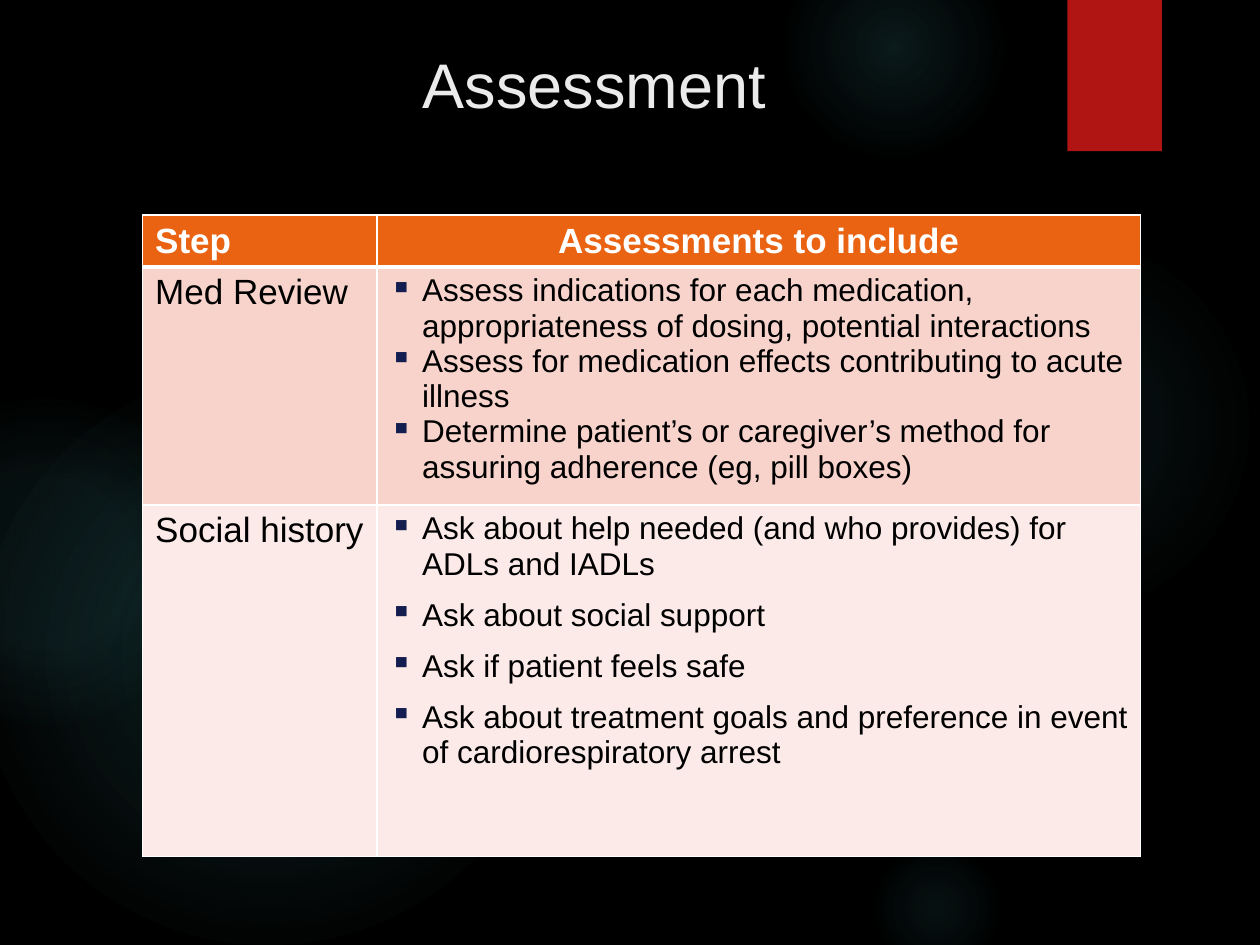
from lxml import etree
from pptx import Presentation
from pptx.dml.color import RGBColor
from pptx.enum import shapes, text
from pptx.oxml import parse_xml
from pptx.oxml.ns import nsdecls, qn
from pptx.util import Pt

HUES = {"back": "000000", "glow": "50B9C1", "red": "B01513", "title": "EBEBEB",
        "head": "EA6312", "odd": "F7D3CC", "even": "FBEAE7",
        "white": "FFFFFF", "black": "000000", "bullet": "131D4F"}


def style(par, size, hue, bold=False):
    for run in par.runs:
        run.font.name = "Arial"
        run.font.size = Pt(size)
        run.font.bold = bold
        run.font.color.rgb = RGBColor.from_string(HUES[hue])


def edge(cell, sides):
    """Draw white cell borders; sides maps L, R, T, B to widths in points."""
    props = cell._tc.get_or_add_tcPr()
    for i, (side, width) in enumerate(sides.items()):
        props.insert(i, parse_xml(
            f'<a:ln{side} {nsdecls("a")} w="{Pt(width)}"><a:solidFill>'
            f'<a:srgbClr val="{HUES["white"]}"/></a:solidFill></a:ln{side}>'))


prs = Presentation()
prs.slide_width, prs.slide_height = Pt(720), Pt(540)
slide = prs.slides.add_slide(prs.slide_layouts[5])
slide.background.fill.solid()
slide.background.fill.fore_color.rgb = RGBColor.from_string(HUES["back"])

# Soft glows: left, top, diameter, then (position, opacity) stops in percent
glows = [
    (496, 132, 222, [(0, 7), (36, 6), (69, 0)]),
    (448, -36, 126, [(0, 14), (36, 7), (73, 0)]),
    (496, 480, 78, [(0, 9), (36, 5), (66, 0)]),
    (-12, 210, 330, [(0, 11), (36, 10), (75, 0)]),
    (-66, 228, 186, [(0, 8), (36, 8), (72, 0)]),
]
for left, top, size, stops in glows:
    glow = slide.shapes.add_shape(shapes.MSO_SHAPE.OVAL, Pt(left), Pt(top), Pt(size), Pt(size))
    glow.shadow.inherit = False
    glow.line.fill.background()
    glow.fill.background()
    marks = "".join(
        f'<a:gs pos="{pos * 1000}"><a:srgbClr val="{HUES["glow"]}">'
        f'<a:alpha val="{alpha * 1000}"/></a:srgbClr></a:gs>' for pos, alpha in stops)
    props = glow._element.spPr
    props.replace(props.find(qn("a:noFill")), parse_xml(
        f'<a:gradFill {nsdecls("a")}><a:gsLst>{marks}</a:gsLst><a:path path="circle">'
        '<a:fillToRect l="50000" t="50000" r="50000" b="50000"/></a:path></a:gradFill>'))

tab = slide.shapes.add_shape(shapes.MSO_SHAPE.RECTANGLE, Pt(610), Pt(0), Pt(54), Pt(86.4))
tab.shadow.inherit = False
tab.line.fill.background()
tab.fill.solid()
tab.fill.fore_color.rgb = RGBColor.from_string(HUES["red"])

title = slide.shapes.title
title.left, title.top, title.width, title.height = Pt(57), Pt(22.3), Pt(575), Pt(78)
frame = title.text_frame
frame.text = "Assessment "
frame.vertical_anchor = text.MSO_ANCHOR.TOP
frame.paragraphs[0].alignment = text.PP_ALIGN.CENTER
style(frame.paragraphs[0], 36, "title")

# Each row: step, items, height, fill, gap between items
rows = [
    ("Step", ["Assessments to include"], 25.2, "head", 0),
    ("Med Review", [
        "Assess indications for each medication, appropriateness of dosing, potential interactions",
        "Assess for medication effects contributing to acute illness",
        "Determine patient’s or caregiver’s method for assuring adherence (eg, pill boxes)",
    ], 136, "odd", 0),
    ("Social history", [
        "Ask about help needed (and who provides) for ADLs and IADLs",
        "Ask about social support",
        "Ask if patient feels safe",
        "Ask about treatment goals and preference in event of cardiorespiratory arrest",
    ], 201, "even", 9),
]
widths = [134, 436.2]
table = slide.shapes.add_table(len(rows), 2, Pt(81.5), Pt(123), Pt(sum(widths)),
                               Pt(sum(row[2] for row in rows))).table
for col, width in zip(table.columns, widths):
    col.width = Pt(width)

for r, (step, items, height, fill, gap) in enumerate(rows):
    head = r == 0
    table.rows[r].height = Pt(height)
    for c, lines in enumerate([[step], items]):
        cell = table.cell(r, c)
        cell.fill.solid()
        cell.fill.fore_color.rgb = RGBColor.from_string(HUES[fill])
        edge(cell, {"L": 1, "R": 1, "T": 3 if r == 1 else 1, "B": 3 if head else 1})
        cell.text_frame.text = "\n".join(lines)
        for i, par in enumerate(cell.text_frame.paragraphs):
            listed = c == 1 and not head
            style(par, 18 if listed else 20, "white" if head else "black", head)
            if head and c == 1:
                par.alignment = text.PP_ALIGN.CENTER
            if listed:
                if i:
                    par.space_before = Pt(gap)
                props = par._p.get_or_add_pPr()
                props.set("marL", str(Pt(18.5)))
                props.set("indent", str(-Pt(18.5)))
                tint = etree.SubElement(props, qn("a:buClr"))
                etree.SubElement(tint, qn("a:srgbClr"), val=HUES["bullet"])
                etree.SubElement(props, qn("a:buChar"), char="▪")

prs.save("out.pptx")
